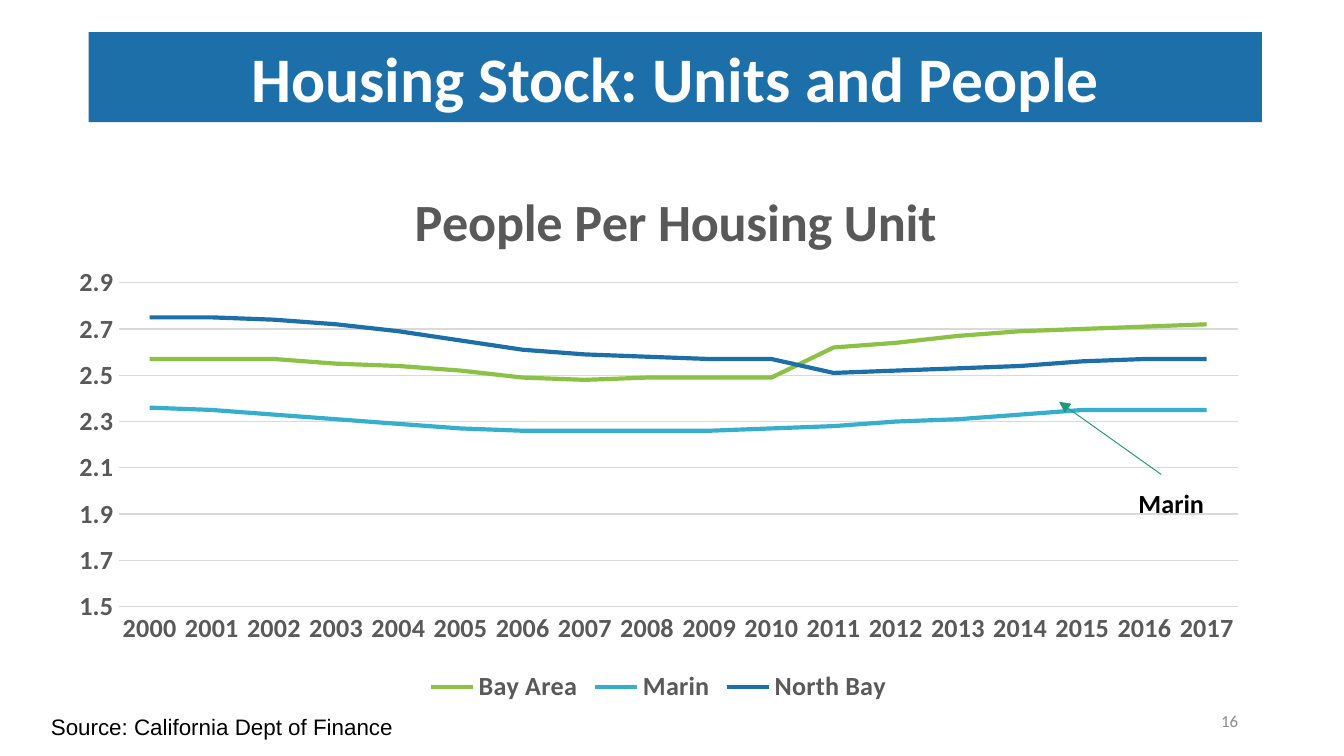
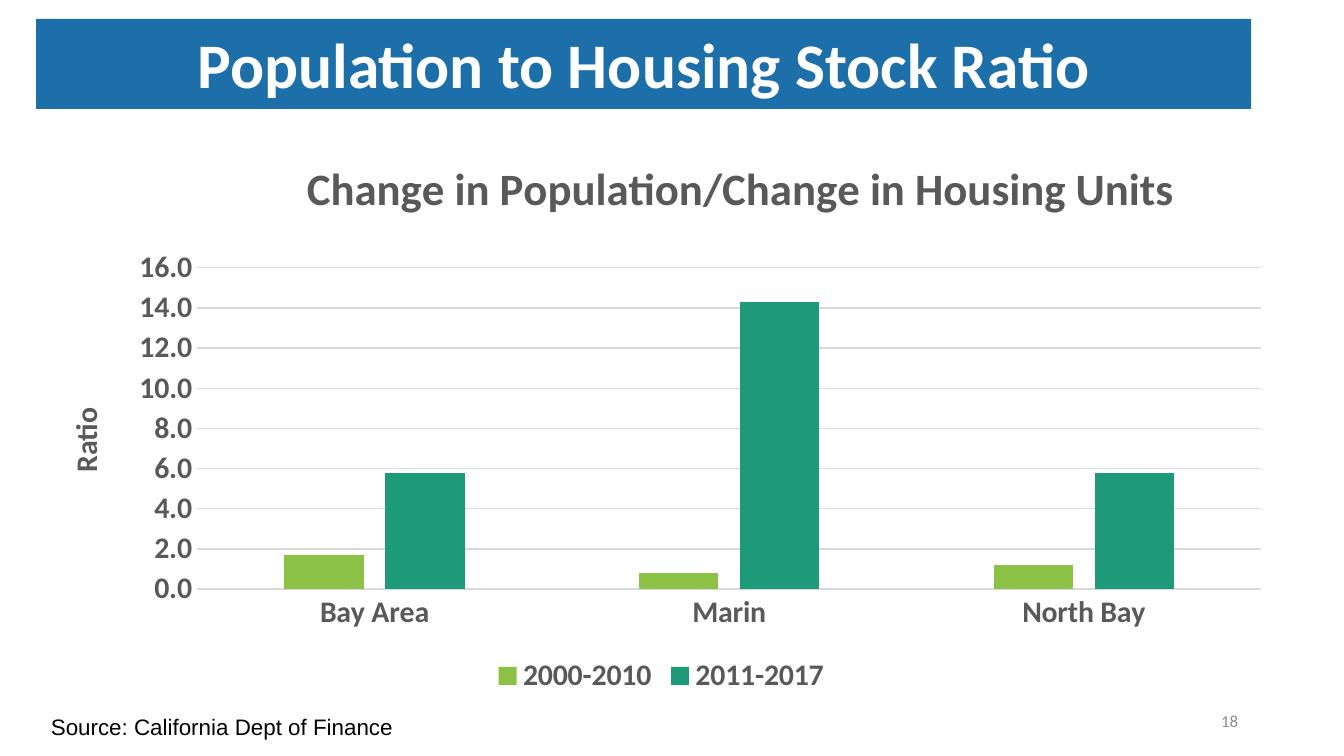
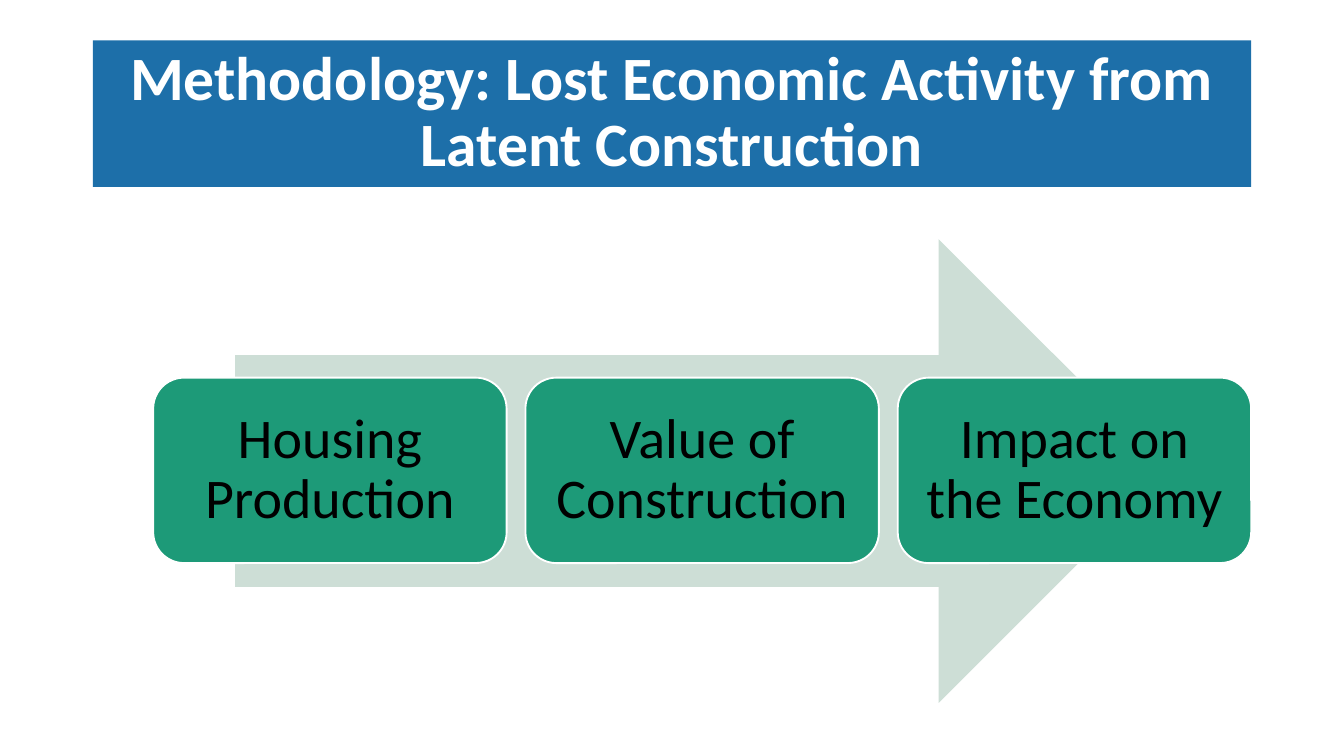
from lxml import etree
from pptx import Presentation
from pptx.chart.data import CategoryChartData
from pptx.dml.color import RGBColor
from pptx.enum import chart as ch, shapes, text
from pptx.oxml.ns import qn
from pptx.util import Inches, Pt


class Theme:
    font, source_font = "Calibri", "Arial"
    blue, green = "1D6FA9", "1D9A78"
    lime, cyan, pale = "8BC145", "36AFCE", "CDDED6"
    white, black = "FFFFFF", "000000"
    grey, page_grey, grid = "595959", "8C8C8C", "D9D9D9"
    title, long_title, step, source, page = 34, 33, 30, 12, 9
    line_title, line_text, column_title, column_text = 28, 14, 24, 16


def write(tf, content, size, color=Theme.black, font=Theme.font, bold=False,
          align=None, anchor=None, inset=None, spacing=None):
    tf.word_wrap = True
    if anchor is not None:
        tf.vertical_anchor = anchor
    if inset is not None:
        tf.margin_left = tf.margin_right = Inches(inset)
        tf.margin_top = tf.margin_bottom = Inches(inset)
    p = tf.paragraphs[0]
    if align is not None:
        p.alignment = align
    if spacing is not None:
        p.line_spacing = spacing
    r = p.add_run()
    r.text = content
    r.font.name, r.font.size, r.font.bold = font, Pt(size), bold
    r.font.color.rgb = RGBColor.from_string(color)


def add_chart(slide, kind, box, cats, series, title, title_size, title_at, size):
    data = CategoryChartData(number_format="General")
    data.categories = cats
    for name, color, values in series:
        data.add_series(name, values)
    chart = slide.shapes.add_chart(kind, *map(Inches, box), data).chart
    chart.font.name, chart.font.size, chart.font.bold = Theme.font, Pt(size), True
    chart.font.color.rgb = RGBColor.from_string(Theme.grey)
    chart.has_title = True
    write(chart.chart_title.text_frame, title, title_size, Theme.grey, bold=True)
    layout = chart.chart_title._element.find(qn("c:layout"))
    manual = etree.SubElement(layout, qn("c:manualLayout"))
    for tag, value in zip(("xMode", "yMode", "x", "y"), ("edge", "edge", *title_at)):
        etree.SubElement(manual, qn(f"c:{tag}"), val=str(value))
    chart.has_legend = True
    chart.legend.position = ch.XL_LEGEND_POSITION.BOTTOM
    chart.legend.include_in_layout = False
    cat_axis, val_axis = chart.category_axis, chart.value_axis
    for axis in (cat_axis, val_axis):
        axis.major_tick_mark = axis.minor_tick_mark = ch.XL_TICK_MARK.NONE
    val_axis.has_major_gridlines = True
    val_axis.tick_labels.number_format = "0.0"
    val_axis.tick_labels.number_format_is_linked = False
    val_axis.format.line.fill.background()
    for line in (cat_axis.format.line, val_axis.major_gridlines.format.line):
        line.color.rgb = RGBColor.from_string(Theme.grid)
        line.width = Pt(0.75)
    chart.plots[0].vary_by_categories = False
    for s, (name, color, values) in zip(chart.plots[0].series, series):
        if kind == ch.XL_CHART_TYPE.LINE:
            s.smooth = False
            s.marker.style = ch.XL_MARKER_STYLE.NONE
            s.format.line.color.rgb = RGBColor.from_string(color)
            s.format.line.width = Pt(2.25)
        else:
            s.format.fill.solid()
            s.format.fill.fore_color.rgb = RGBColor.from_string(color)
    return chart


prs = Presentation()
prs.slide_width = Inches(10)
prs.slide_height = Inches(10 * 9 / 16)
center, right = text.PP_ALIGN.CENTER, text.PP_ALIGN.RIGHT
top, middle = text.MSO_ANCHOR.TOP, text.MSO_ANCHOR.MIDDLE

pages = [
    ("Housing Stock: Units and People", (0.66, 0.24, 8.73, 0.67), "16"),
    ("Population to Housing Stock Ratio", (0.27, 0.14, 9.04, 0.67), "18"),
    ("Methodology: Lost Economic Activity from Latent Construction",
     (0.69, 0.3, 8.62, 1.09), None),
]
slides = []
for title, band, number in pages:
    slide = prs.slides.add_slide(prs.slide_layouts[6])
    slides.append(slide)
    sp = slide.shapes.add_shape(shapes.MSO_SHAPE.RECTANGLE, *map(Inches, band))
    sp.shadow.inherit = False
    sp.fill.solid()
    sp.fill.fore_color.rgb = RGBColor.from_string(Theme.blue)
    sp.line.fill.background()
    if number:
        write(sp.text_frame, title, Theme.title, Theme.white, bold=True,
              align=center, anchor=top)
        sp = slide.shapes.add_textbox(Inches(7.06), Inches(5.21), Inches(2.25), Inches(0.3))
        write(sp.text_frame, number, Theme.page, Theme.page_grey, align=right, anchor=middle)
        sp = slide.shapes.add_textbox(Inches(0.28), Inches(5.26), Inches(4.29), Inches(0.3))
        write(sp.text_frame, "Source: California Dept of Finance", Theme.source,
              font=Theme.source_font)
    else:
        write(sp.text_frame, title, Theme.long_title, Theme.white, bold=True,
              align=center, anchor=middle, inset=0.1, spacing=0.9)

units, ratio, method = slides

people = [
    ("Bay Area", Theme.lime,
     [2.57, 2.57, 2.57, 2.55, 2.54, 2.52, 2.49, 2.48, 2.49,
      2.49, 2.49, 2.62, 2.64, 2.67, 2.69, 2.7, 2.71, 2.72]),
    ("Marin", Theme.cyan,
     [2.36, 2.35, 2.33, 2.31, 2.29, 2.27, 2.26, 2.26, 2.26,
      2.26, 2.27, 2.28, 2.3, 2.31, 2.33, 2.35, 2.35, 2.35]),
    ("North Bay", Theme.blue,
     [2.75, 2.75, 2.74, 2.72, 2.69, 2.65, 2.61, 2.59, 2.58,
      2.57, 2.57, 2.51, 2.52, 2.53, 2.54, 2.56, 2.57, 2.57]),
]
chart = add_chart(units, ch.XL_CHART_TYPE.LINE, (0.41, 1.06, 8.98, 4.21),
                  list(range(2000, 2018)), people, "People Per Housing Unit",
                  Theme.line_title, (0.29, 0.06), Theme.line_text)
axis = chart.value_axis
axis.minimum_scale, axis.maximum_scale, axis.major_unit = 1.5, 2.9, 0.2

arrow = units.shapes.add_connector(shapes.MSO_CONNECTOR.STRAIGHT, Inches(8.64), Inches(3.53),
                                   Inches(7.88), Inches(2.99))
arrow.line.color.rgb = RGBColor.from_string(Theme.green)
arrow.line.width = Pt(0.5)
etree.SubElement(arrow.line._get_or_add_ln(), qn("a:tailEnd"), type="triangle")
etree.SubElement(arrow._element.spPr, qn("a:effectLst"))
sp = units.shapes.add_textbox(Inches(8.27), Inches(3.58), Inches(0.89), Inches(0.34))
write(sp.text_frame, "Marin", Theme.line_text, bold=True, align=center)

changes = [("2000-2010", Theme.lime, [1.7, 0.8, 1.2]),
           ("2011-2017", Theme.green, [5.8, 14.3, 5.8])]
chart = add_chart(ratio, ch.XL_CHART_TYPE.COLUMN_CLUSTERED, (0.27, 1.03, 9.3, 4.18),
                  ["Bay Area", "Marin", "North Bay"], changes,
                  "Change in Population/Change in Housing Units",
                  Theme.column_title, (0.21, 0.02), Theme.column_text)
chart.plots[0].gap_width, chart.plots[0].overlap = 219, -27
tf = chart.value_axis.axis_title.text_frame
write(tf, "Ratio", Theme.column_text, Theme.grey, bold=True)
tf._txBody.bodyPr.set("rot", "-5400000")

sp = method.shapes.add_shape(shapes.MSO_SHAPE.RIGHT_ARROW, Inches(1.75), Inches(1.78),
                             Inches(6.96), Inches(3.45))
sp.shadow.inherit = False
sp.fill.solid()
sp.fill.fore_color.rgb = RGBColor.from_string(Theme.pale)
sp.line.fill.background()
steps = ["Housing Production", "Value of Construction", "Impact on the Economy"]
for i, step in enumerate(steps):
    sp = method.shapes.add_shape(shapes.MSO_SHAPE.ROUNDED_RECTANGLE, Inches(1.14 + 2.77 * i),
                                 Inches(2.81), Inches(2.63), Inches(1.38))
    sp.shadow.inherit = False
    sp.fill.solid()
    sp.fill.fore_color.rgb = RGBColor.from_string(Theme.green)
    sp.line.color.rgb = RGBColor.from_string(Theme.white)
    sp.line.width = Pt(1)
    write(sp.text_frame, step, Theme.step, align=center, anchor=middle,
          inset=0.12, spacing=0.9)

prs.save("out.pptx")
